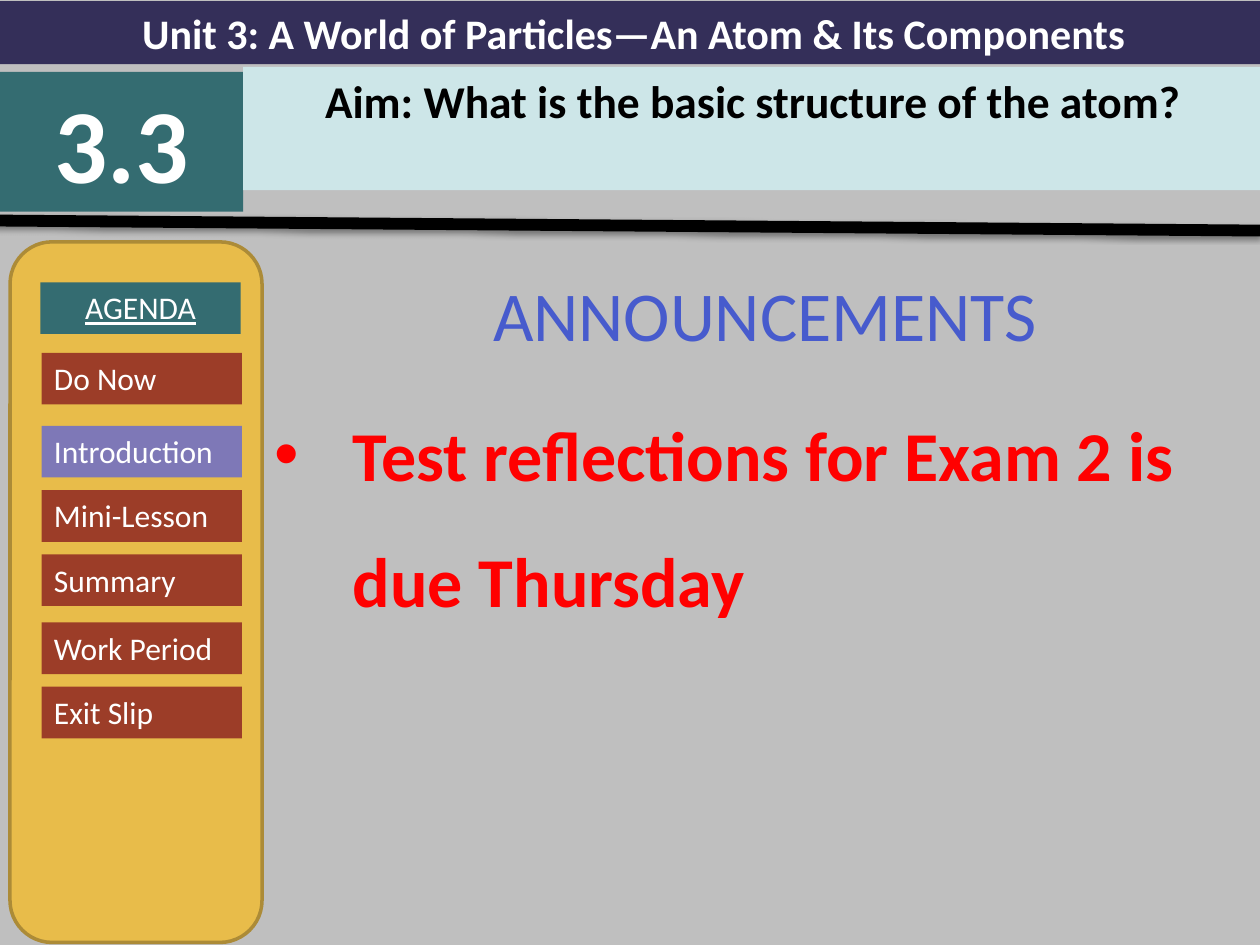
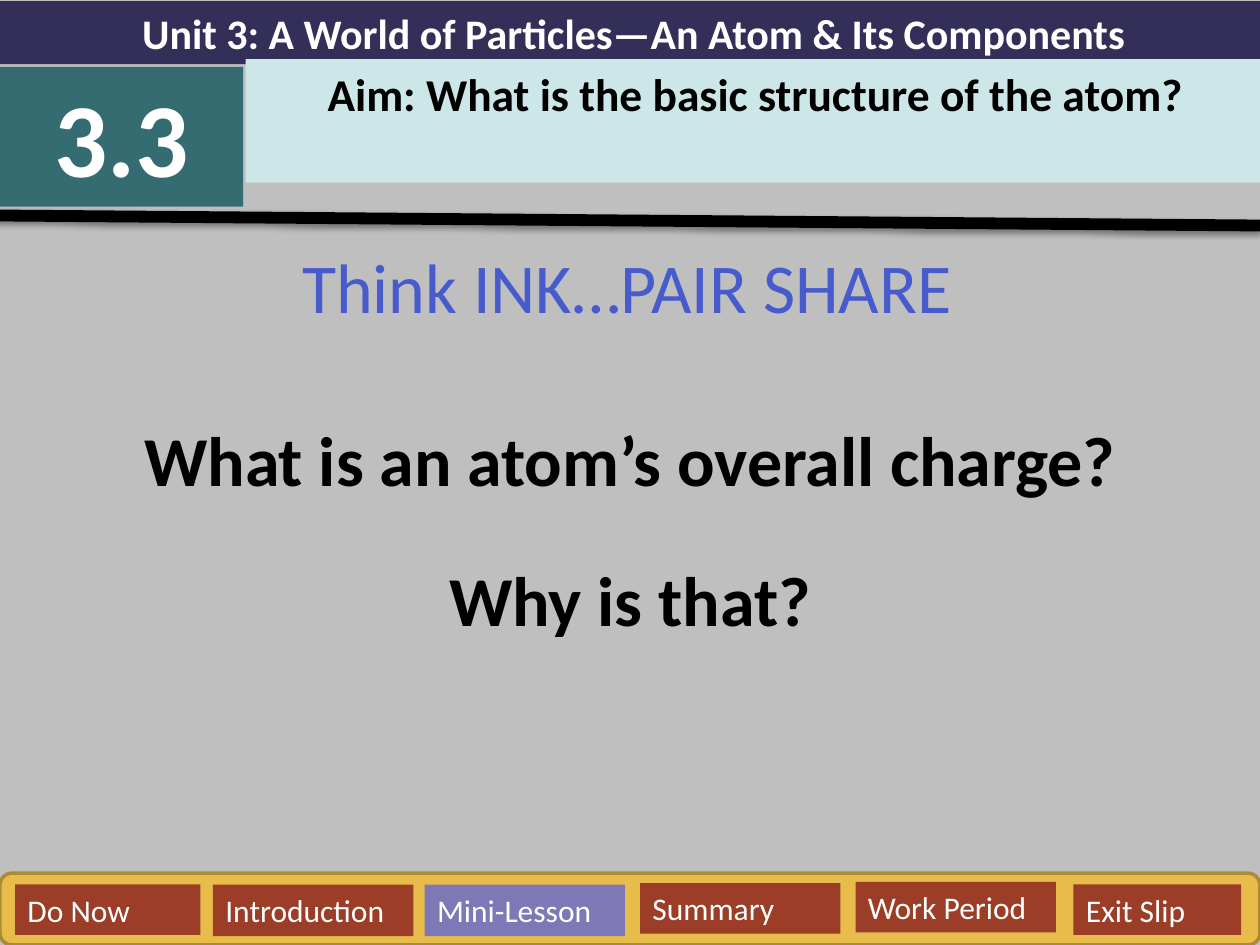
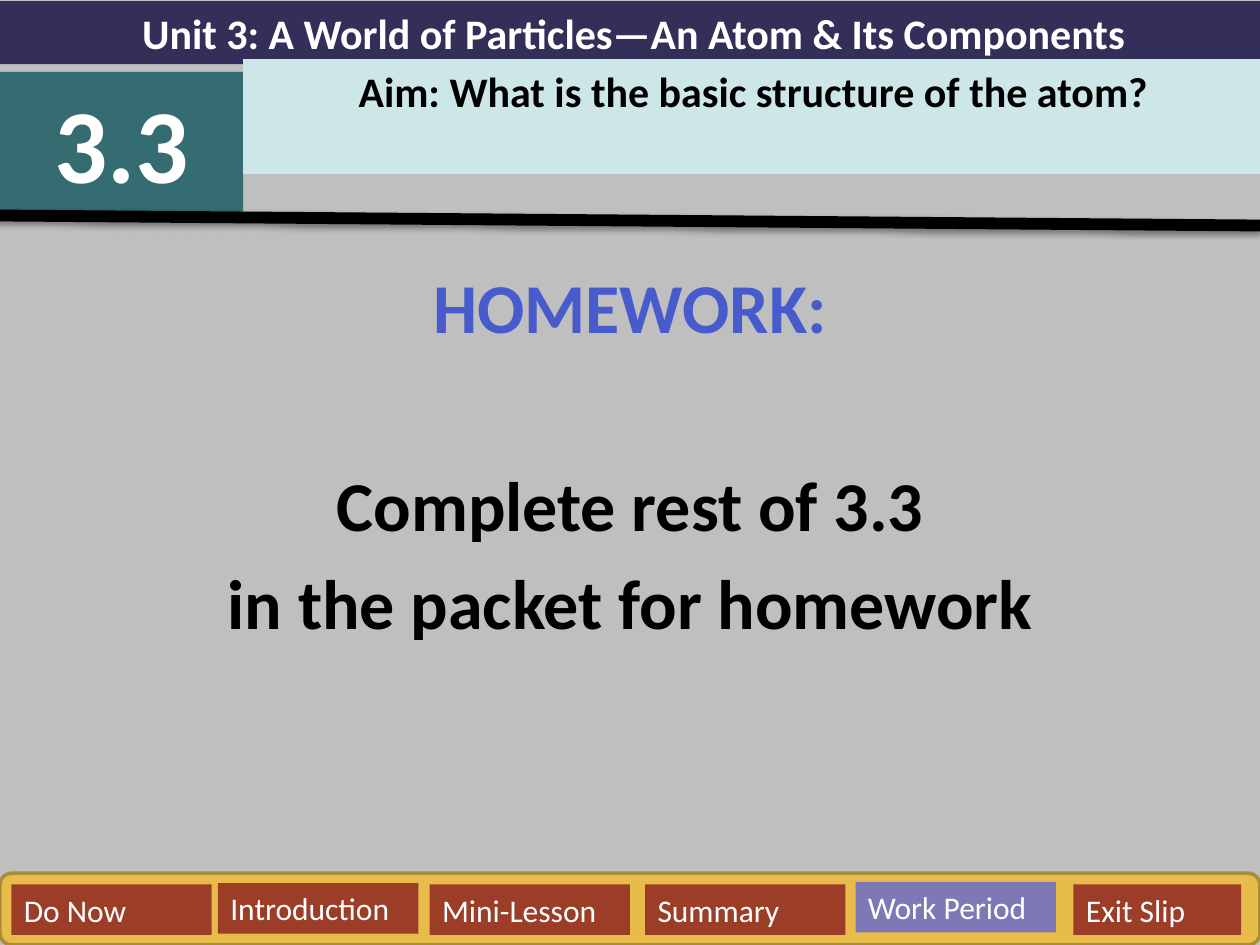
from lxml import etree
from pptx import Presentation
from pptx import util as u
from pptx.dml.color import RGBColor
from pptx.enum import shapes, text
from pptx.oxml.ns import qn

GREY = RGBColor(0xBF, 0xBF, 0xBF)
NAVY = RGBColor(0x34, 0x2F, 0x59)
TEAL = RGBColor(0x34, 0x6C, 0x71)
PALE = RGBColor(0xCD, 0xE6, 0xE8)
GOLD = RGBColor(0xE8, 0xBC, 0x4A)
BRONZE = RGBColor(0xAC, 0x8B, 0x37)
RUST = RGBColor(0x9C, 0x3D, 0x28)
VIOLET = RGBColor(0x7E, 0x78, 0xB7)
BLUE = RGBColor(0x47, 0x5B, 0xCD)
RED = RGBColor(0xFF, 0x00, 0x00)
BLACK = RGBColor(0x00, 0x00, 0x00)
WHITE = RGBColor(0xFF, 0xFF, 0xFF)

FONT = "Calibri"
UNIT = "Unit 3: A World of Particles—An Atom & Its Components"
LESSON = "3.3"
AIM = "Aim: What is the basic structure of the atom?"
STEPS = ["Do Now", "Introduction", "Mini-Lesson", "Summary", "Work Period", "Exit Slip"]
STEP_W, STEP_H = 1.59, 0.41
SIDE_PANEL = (0.08, 1.92, 2, 5.56)
BOTTOM_PANEL = (0, 6.93, 10, 0.57)
SIDE_STEPS = [(0.33, y, STEP_W, STEP_H) for y in (2.8, 3.38, 3.89, 4.4, 4.94, 5.45)]

SLIDES = [
    dict(
        lesson_top=0.57, aim=(1.93, 0.53, 8.1, 0.98), aim_size=26, rule_top=1.75,
        body=(2.08, 2.04, 7.98, 5.46), body_inset=0.05,
        paragraphs=[
            ("ANNOUNCEMENTS", dict(color=BLUE, spacing=1.1)),
            ("Test reflections for Exam 2 is due Thursday",
             dict(color=RED, bold=True, spacing=1.5, before=8, bullet=0.62,
                  align=text.PP_ALIGN.LEFT)),
        ],
        panel=SIDE_PANEL, agenda=(0.32, 2.24, STEP_W, STEP_H),
        steps=SIDE_STEPS, current="Introduction",
    ),
    dict(
        lesson_top=0.53, aim=(1.95, 0.47, 8.1, 0.98), aim_size=26, rule_top=1.71,
        body=(0, 1.79, 10, 5.15), body_inset=1.18,
        paragraphs=[
            ("What is an atom’s overall charge?", dict(bold=True, spacing=1.5)),
            ("Why is that?", dict(bold=True, spacing=1.5, before=8)),
        ],
        heading=("Think INK…PAIR SHARE", (-0.05, 1.88, 10.05, 1.18)),
        panel=BOTTOM_PANEL, current="Mini-Lesson",
        steps=[(0.12, 7.02, 1.47, 0.4), (1.69, 7.02, STEP_W, STEP_H),
               (3.37, 7.02, STEP_W, STEP_H), (5.08, 7.01, STEP_W, 0.4),
               (6.79, 7, STEP_W, 0.4), (8.52, 7.02, 1.33, 0.4)],
    ),
    dict(
        lesson_top=0.57, aim=(1.93, 0.47, 8.1, 0.91), aim_size=24, rule_top=1.71,
        body=(0, 2.04, 10, 5.46), body_inset=0.05,
        paragraphs=[
            ("HOMEWORK:", dict(color=BLUE, bold=True)),
            ("Complete rest of 3.3", dict(bold=True, before=65)),
            ("in the packet for homework", dict(bold=True, before=8)),
        ],
        panel=BOTTOM_PANEL, current="Work Period",
        steps=[(0.09, 7.02, STEP_W, 0.4), (1.73, 7.01, STEP_W, 0.4),
               (3.41, 7.02, STEP_W, 0.4), (5.12, 7.02, STEP_W, 0.4),
               (6.79, 7, STEP_W, 0.4), (8.52, 7.02, 1.33, 0.4)],
    ),
]


def inches(box):
    return [u.Inches(v) for v in box]


def write(p, words, size=40, color=BLACK, bold=False, underline=False,
          align=text.PP_ALIGN.CENTER, spacing=1.0, before=0, bullet=None):
    p.alignment = align
    p.line_spacing = spacing
    p.space_before = u.Pt(before)
    r = p.add_run()
    r.text = words
    r.font.name = FONT
    r.font.size = u.Pt(size)
    r.font.bold = bold
    r.font.underline = underline
    r.font.color.rgb = color
    if bullet:
        pPr = p._p.get_or_add_pPr()
        pPr.set("marL", str(u.Inches(bullet)))
        pPr.set("indent", str(-u.Inches(bullet)))
        etree.SubElement(pPr, qn("a:buFont"), typeface="Arial")
        etree.SubElement(pPr, qn("a:buChar"), char="•")


def place(sp, box):
    sp.left, sp.top, sp.width, sp.height = inches(box)
    tf = sp.text_frame
    tf.word_wrap = True
    tf.auto_size = text.MSO_AUTO_SIZE.NONE
    tf.vertical_anchor = text.MSO_ANCHOR.TOP
    return tf


def add_box(s, box, fill, words=None, kind=shapes.MSO_SHAPE.RECTANGLE, line=None, **fmt):
    sp = s.shapes.add_shape(kind, *inches(box))
    sp.shadow.inherit = False
    sp.fill.solid()
    sp.fill.fore_color.rgb = fill
    if line:
        sp.line.color.rgb = line
        sp.line.width = u.Pt(2)
    else:
        sp.line.fill.background()
    if words:
        write(place(sp, box).paragraphs[0], words, **fmt)


def add_rule(s, top):
    cx = s.shapes.add_connector(shapes.MSO_CONNECTOR.STRAIGHT,
                                *inches((-0.05, top, 10, top + 0.08)))
    cx.line.color.rgb = BLACK
    cx.line.width = u.Pt(6.75)
    effects = etree.SubElement(cx._element.spPr, qn("a:effectLst"))
    shadow = etree.SubElement(effects, qn("a:outerShdw"), blurRad="40000",
                              dist="20000", dir="5400000", rotWithShape="0")
    color = etree.SubElement(shadow, qn("a:srgbClr"), val=str(BLACK))
    etree.SubElement(color, qn("a:alpha"), val="38000")


def add_header(s, d):
    add_box(s, (0, 0.01, 10.06, 0.5), NAVY, UNIT, size=24, color=WHITE, bold=True)
    add_box(s, (0, d["lesson_top"], 1.93, 1.11), TEAL, LESSON, size=60, color=WHITE, bold=True)
    title = s.shapes.title
    title.fill.solid()
    title.fill.fore_color.rgb = PALE
    write(place(title, d["aim"]).paragraphs[0], AIM, size=d["aim_size"], bold=True)
    s.shapes._spTree.append(title._element)
    add_rule(s, d["rule_top"])


def add_body(s, d):
    tf = place(s.placeholders[1], d["body"])
    tf.margin_top = u.Inches(d["body_inset"])
    for i, (words, fmt) in enumerate(d["paragraphs"]):
        write(tf.add_paragraph() if i else tf.paragraphs[0], words, **fmt)


def add_steps(s, d):
    add_box(s, d["panel"], GOLD, kind=shapes.MSO_SHAPE.ROUNDED_RECTANGLE, line=BRONZE)
    if "agenda" in d:
        add_box(s, d["agenda"], TEAL, "AGENDA", size=18, color=WHITE, underline=True)
    for step, box in zip(STEPS, d["steps"]):
        add_box(s, box, VIOLET if step == d["current"] else RUST, step,
                size=18, color=WHITE, align=text.PP_ALIGN.LEFT)


def main():
    prs = Presentation()
    prs.slide_width, prs.slide_height = u.Inches(10), u.Inches(7.5)
    bg = prs.slide_master.background.fill
    bg.solid()
    bg.fore_color.rgb = GREY
    for d in SLIDES:
        s = prs.slides.add_slide(prs.slide_layouts[0])
        add_body(s, d)
        add_header(s, d)
        add_steps(s, d)
        if "heading" in d:
            words, box = d["heading"]
            tb = s.shapes.add_textbox(*inches(box))
            write(place(tb, box).paragraphs[0], words, color=BLUE)
    prs.save("out.pptx")


if __name__ == "__main__":
    main()
